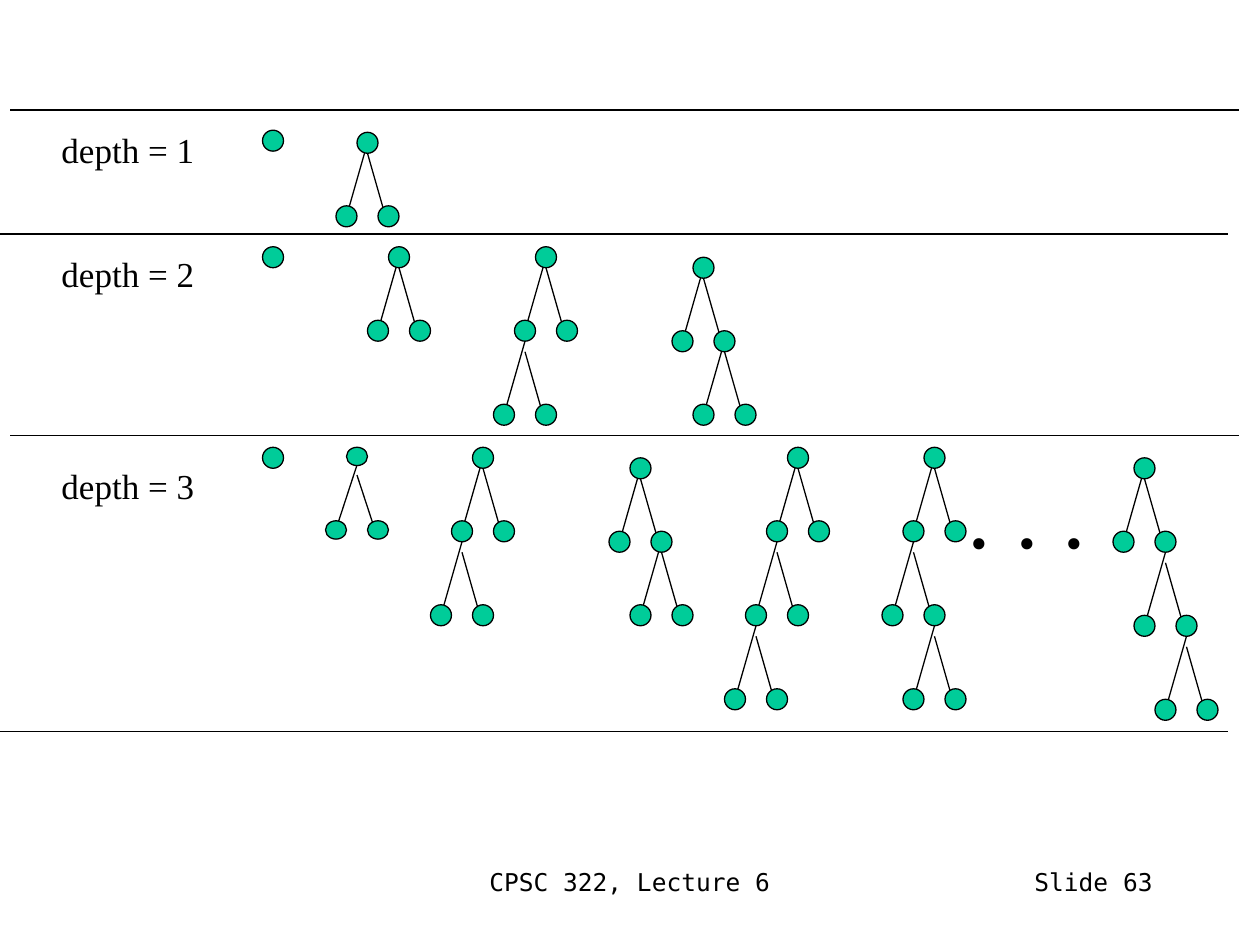
from dataclasses import dataclass

from lxml.etree import SubElement
from pptx import Presentation
from pptx.dml.color import RGBColor
from pptx.enum.shapes import MSO_CONNECTOR as Connector, MSO_SHAPE as Shape
from pptx.enum.text import PP_ALIGN as Align
from pptx.oxml.ns import qn
from pptx.util import Cm, Pt

BLACK = RGBColor(0x00, 0x00, 0x00)
GREEN = RGBColor(0x00, 0xCC, 0x99)
SERIF = "Times New Roman"
MONO = "DejaVu Sans Mono"

UNIT = 2.54 / 12  # tree grid step in cm
NODE = 2  # node diameter in grid steps
SPREAD = 2  # sideways step from parent to child
CHILD_DROP = 7  # from the top of a parent to the top of its children


@dataclass
class ForkStyle:
    node_height: float = NODE
    branch_start: float = 1
    branch_drop: float = 7
    branch_offset: float = 1  # how much lower the right branch runs


FULL = ForkStyle()
FLAT = ForkStyle(1.75, 1.7, 6.1, 0.95)

# Root centre x, root top y, turns taken to the next fork, gap above that fork
TREES = [
    (35, 12.6, "", 0),
    (38, 23.5, "", 0),
    (52, 23.5, "L", 1),
    (67, 24.5, "R", 0),
    (46, 42.6, "L", 1),
    (61, 43.6, "R", 0),
    (76, 42.6, "LL", 1),
    (89, 42.6, "LR", 1),
    (109, 43.6, "RR", 1),
]
SINGLE_NODES = [(26, 12.4), (26, 23.5), (26, 42.6)]
DIVIDERS = [(0.21, 2.22), (0, 4.72), (0.21, 8.78), (0, 14.74)]
DIVIDER_LENGTH = 24.76


class SlideBuilder:
    def __init__(self, slide):
        self.slide = slide
        self.line_format = {"width": Pt(0.75)}

    def style_line(self, line):
        for name, value in self.line_format.items():
            setattr(line, name, value)
        line.color.rgb = BLACK

    def line(self, x1, y1, x2, y2):
        connector = self.slide.shapes.add_connector(
            Connector.STRAIGHT, Cm(x1), Cm(y1), Cm(x2), Cm(y2))
        self.style_line(connector.line)
        SubElement(connector._element.spPr, qn("a:effectLst"))

    def node(self, x, y, height=NODE):
        """Draw a node from its centre x and top y in grid steps."""
        shape = self.slide.shapes.add_shape(
            Shape.OVAL, Cm((x - NODE / 2) * UNIT), Cm(y * UNIT),
            Cm(NODE * UNIT), Cm(height * UNIT))
        shape.shadow.inherit = False
        shape.fill.solid()
        shape.fill.fore_color.rgb = GREEN
        self.style_line(shape.line)

    def fork(self, x, y, style=FULL):
        """Draw two branches with a child at the end of each."""
        for side, offset in ((1, style.branch_offset), (-1, 0)):
            start = y + style.branch_start + offset
            self.line(x * UNIT, start * UNIT, (x + side * SPREAD) * UNIT,
                      (start + style.branch_drop) * UNIT)
        for side in (1, -1):
            self.node(x + side * SPREAD, y + CHILD_DROP, style.node_height)

    def tree(self, x, y, turns="", gap=0, style=FULL):
        """Draw a root and a fork, then one more fork for each turn."""
        forks = [(x, y)]
        for turn in turns:
            x += SPREAD if turn == "R" else -SPREAD
            y += CHILD_DROP + gap
            forks.append((x, y))
        for fork_x, fork_y in reversed(forks):
            self.fork(fork_x, fork_y, style)
        self.node(*forks[0], style.node_height)

    def text(self, box, lines, font, size, align=Align.LEFT, wrap=False):
        """Write (text, space before in points) pairs as paragraphs."""
        frame = self.slide.shapes.add_textbox(*map(Cm, box)).text_frame
        frame.word_wrap = wrap
        font_format = {"name": font, "size": Pt(size)}
        for index, (content, space) in enumerate(lines):
            paragraph = frame.add_paragraph() if index else frame.paragraphs[0]
            paragraph.text = content
            paragraph.alignment = align
            paragraph.space_before = Pt(space)
            for run in paragraph.runs:
                for name, value in font_format.items():
                    setattr(run.font, name, value)
                run.font.color.rgb = BLACK


def main():
    presentation = Presentation()
    presentation.slide_width, presentation.slide_height = Cm(25.4), Cm(19.05)
    slide = presentation.slides.add_slide(presentation.slide_layouts[6])
    builder = SlideBuilder(slide)

    builder.text((8.68, 17.36, 8.04, 1.27), [("CPSC 322, Lecture 6", 0)],
                 MONO, 14, Align.CENTER, wrap=True)
    builder.text((18.2, 17.36, 5.29, 1.27), [("Slide 63", 0)],
                 MONO, 14, Align.RIGHT, wrap=True)
    builder.text((0.99, 2.47, 3.2, 7.8),
                 [("depth = 1", 0), ("depth = 2", 46.7), ("depth = 3", 97)],
                 SERIF, 20)
    for x, y in DIVIDERS:
        builder.line(x, y, x + DIVIDER_LENGTH, y)
    for x, y in SINGLE_NODES:
        builder.node(x, y)
    for tree in TREES:
        builder.tree(*tree)
    builder.tree(34, 42.6, style=FLAT)
    builder.text((19.26, 9.02, 2.9, 2.54), [(". . .", 0)], SERIF, 54)

    presentation.save("out.pptx")


if __name__ == "__main__":
    main()
